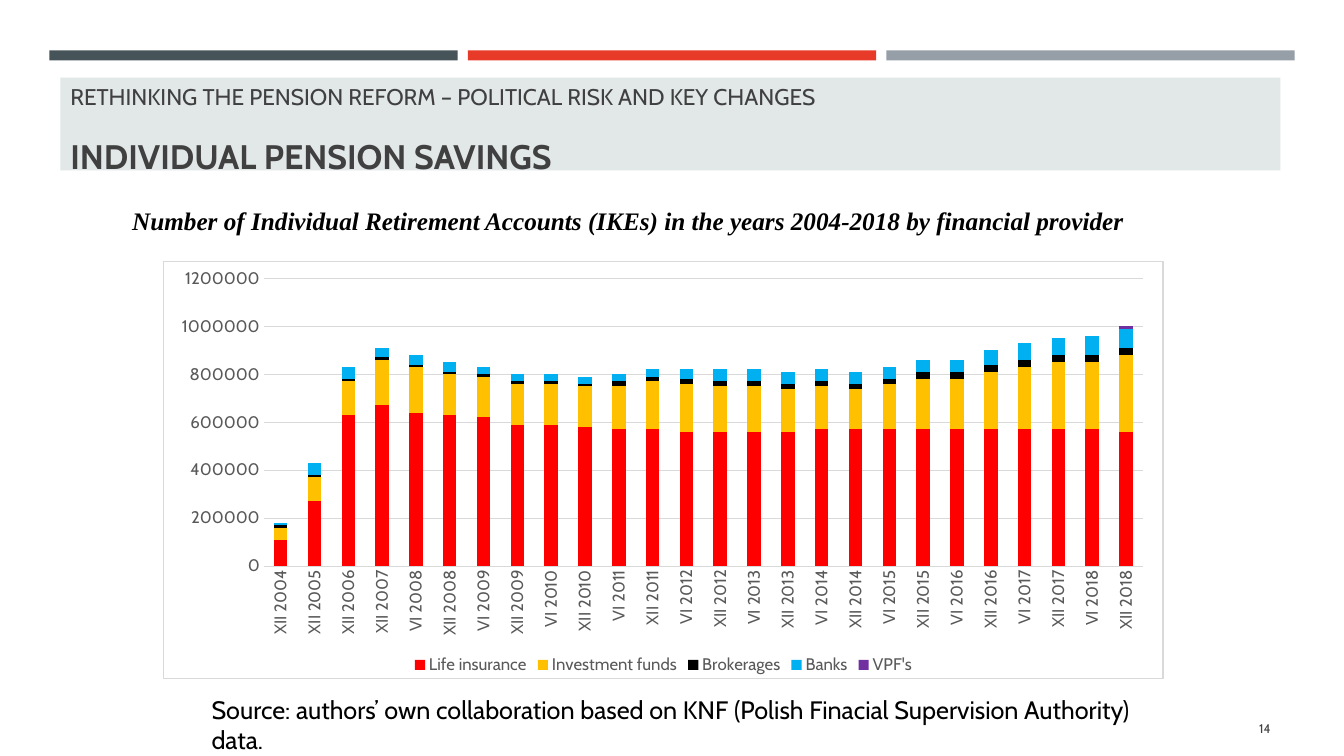
from pptx import Presentation
from pptx.chart.data import CategoryChartData
from pptx.dml.color import RGBColor
from pptx.enum.chart import XL_CHART_TYPE, XL_LEGEND_POSITION, XL_TICK_MARK
from pptx.enum.shapes import MSO_SHAPE
from pptx.enum.text import MSO_ANCHOR, PP_ALIGN
from pptx.oxml import parse_xml
from pptx.oxml.ns import nsdecls
from pptx.util import Inches, Pt

STACKED = XL_CHART_TYPE.COLUMN_STACKED
BOTTOM = XL_LEGEND_POSITION.BOTTOM
NO_TICK = XL_TICK_MARK.NONE
RECT = MSO_SHAPE.RECTANGLE
TOP, MIDDLE = MSO_ANCHOR.TOP, MSO_ANCHOR.MIDDLE
LEFT, CENTER, RIGHT = PP_ALIGN.LEFT, PP_ALIGN.CENTER, PP_ALIGN.RIGHT

FONT, SERIF = "Cabin", "Times New Roman"
DARK, GRAY, RULE = "404040", "595959", "D9D9D9"

PERIODS = ["XII 2004", "XII 2005", "XII 2006", "XII 2007"] + [
    f"{month} {year}" for year in range(2008, 2019) for month in ("VI", "XII")]
THOUSANDS = [
    ("Life insurance", "FF0000",
     [110, 270, 630, 670, 640, 630, 620, 590, 590, 580, 570, 570, 560,
      560, 560, 560] + [570] * 9 + [560]),
    ("Investment funds", "FFC000",
     [50, 100, 140, 190, 190, 170, 170, 170, 170, 170, 180, 200, 200,
      190, 190, 180, 180, 170, 190, 210, 210, 240, 260, 280, 280, 320]),
    ("Brokerages", "000000", [10] * 10 + [20] * 9 + [30] * 7),
    ("Banks", "00B0F0",
     [10, 50, 50, 40, 40, 40] + [30] * 6 + [40] + [50] * 8
     + [60, 70, 70, 80, 80]),
    ("VPF's", "7030A0", [None] * 12 + [0] * 13 + [10]),
]


def rgb(value):
    """Turn a hex string into a colour."""
    return RGBColor.from_string(value)


def style(font, size, color, name=FONT, bold=False, italic=False):
    """Set the look of a font."""
    font.size, font.name = Pt(size), name
    font.bold, font.italic = bold, italic
    font.color.rgb = rgb(color)


def add_rect(s, box, color):
    """Add a plain filled rectangle."""
    sp = s.shapes.add_shape(RECT, *map(Inches, box))
    sp.shadow.inherit = False
    sp.fill.solid()
    sp.fill.fore_color.rgb = rgb(color)
    sp.line.fill.background()
    return sp


def add_run(p, text, size, color, **look):
    """Add one styled run to a paragraph."""
    r = p.add_run()
    r.text = text
    style(r.font, size, color, **look)


def add_label(s, box, text, size, color, align=LEFT, anchor=TOP, **look):
    """Add a wrapped text box with one paragraph."""
    tf = s.shapes.add_textbox(*map(Inches, box)).text_frame
    tf.word_wrap = True
    tf.vertical_anchor = anchor
    p = tf.paragraphs[0]
    p.alignment = align
    add_run(p, text, size, color, **look)


def add_stripes(s, box):
    """Split the box into three coloured stripes with equal gaps."""
    x, y, w, h = box
    gap = 0.1
    stripe = (w - 2 * gap) / 3
    for i, color in enumerate(("465359", "E73A29", "969FA7")):
        add_rect(s, (x + i * (stripe + gap), y, stripe, h), color)


def add_title(s, box):
    """Add the title band with its section line and heading."""
    tf = add_rect(s, box, "E2E7E8").text_frame
    tf.word_wrap = True
    tf.vertical_anchor = TOP
    p = tf.paragraphs[0]
    p.alignment = LEFT
    add_run(p, "RETHINKING THE PENSION REFORM – POLITICAL RISK AND KEY CHANGES",
            16.2, DARK)
    p = tf.add_paragraph()
    p.alignment = LEFT
    p.space_before = Pt(18)
    add_run(p, "INDIVIDUAL PENSION SAVINGS", 24.3, DARK, bold=True)


def style_axis(axis):
    """Set tick marks and label font of an axis."""
    axis.major_tick_mark = axis.minor_tick_mark = NO_TICK
    style(axis.tick_labels.font, 12, GRAY)


def style_line(line):
    """Give a line the thin light rule."""
    line.width = Pt(0.75)
    line.color.rgb = rgb(RULE)


def frame_chart(chart):
    """Add the chart border, plot layout and upright period labels."""
    root = chart.element
    root.xpath("c:chart")[0].addnext(parse_xml(
        f'<c:spPr {nsdecls("c", "a")}>'
        '<a:solidFill><a:srgbClr val="FFFFFF"/></a:solidFill>'
        f'<a:ln w="{Pt(0.75)}"><a:solidFill><a:srgbClr val="{RULE}"/>'
        '</a:solidFill></a:ln></c:spPr>'))
    shares = "".join(f'<c:{k} val="{v}"/>' for k, v in (
        ("x", 0.1), ("y", 0.04), ("w", 0.88), ("h", 0.69)))
    root.xpath("c:chart/c:plotArea")[0].insert(0, parse_xml(
        f'<c:layout {nsdecls("c")}><c:manualLayout>'
        '<c:layoutTarget val="inner"/><c:xMode val="edge"/>'
        f'<c:yMode val="edge"/>{shares}</c:manualLayout></c:layout>'))
    body = root.xpath("c:chart/c:plotArea/c:catAx/c:txPr/a:bodyPr")[0]
    body.set("rot", "-5400000")
    body.set("vert", "horz")


def add_accounts_chart(s, box):
    """Add the stacked columns of accounts by provider."""
    data = CategoryChartData()
    data.categories = PERIODS
    for name, _, values in THOUSANDS:
        data.add_series(name, [v if v is None else v * 1000 for v in values])
    chart = s.shapes.add_chart(STACKED, *map(Inches, box), data).chart
    chart.has_title = False
    style(chart.font, 10, "000000")
    chart.has_legend = True
    chart.legend.position = BOTTOM
    chart.legend.include_in_layout = False
    style(chart.legend.font, 12, GRAY)

    plot = chart.plots[0]
    plot.vary_by_categories = False
    plot.gap_width, plot.overlap = 150, 100
    for series, (_, color, _) in zip(plot.series, THOUSANDS):
        series.format.fill.solid()
        series.format.fill.fore_color.rgb = rgb(color)

    periods, accounts = chart.category_axis, chart.value_axis
    style_axis(periods)
    style_axis(accounts)
    style_line(periods.format.line)
    style_line(accounts.major_gridlines.format.line)
    accounts.format.line.fill.background()
    accounts.minimum_scale, accounts.maximum_scale = 0, 1200000
    accounts.major_unit = 200000
    frame_chart(chart)


def add_savings_slide(prs):
    """Build the individual pension savings slide."""
    s = prs.slides.add_slide(prs.slide_layouts[6])
    add_stripes(s, (0.49, 0.5, 12.35, 0.1))
    add_label(s, (11.55, 7.03, 1.15, 0.4), "14", 9, DARK, RIGHT, MIDDLE)
    add_accounts_chart(s, (1.62, 2.59, 9.92, 4.15))
    add_label(s, (1.17, 1.99, 10.12, 0.41),
              "Number of Individual Retirement Accounts (IKEs) in the years "
              "2004-2018 by financial provider",
              18, "000000", CENTER, name=SERIF, bold=True, italic=True)
    add_label(s, (2, 6.84, 9.7, 0.4),
              "Source: authors’ own collaboration based on KNF (Polish Finacial "
              "Supervision Authority) data.", 18, "000000")
    add_title(s, (0.6, 0.77, 12.1, 0.92))


def main():
    """Create and save the presentation."""
    prs = Presentation()
    prs.slide_width, prs.slide_height = Inches(13.33), Inches(7.5)
    add_savings_slide(prs)
    prs.save("out.pptx")


if __name__ == "__main__":
    main()
